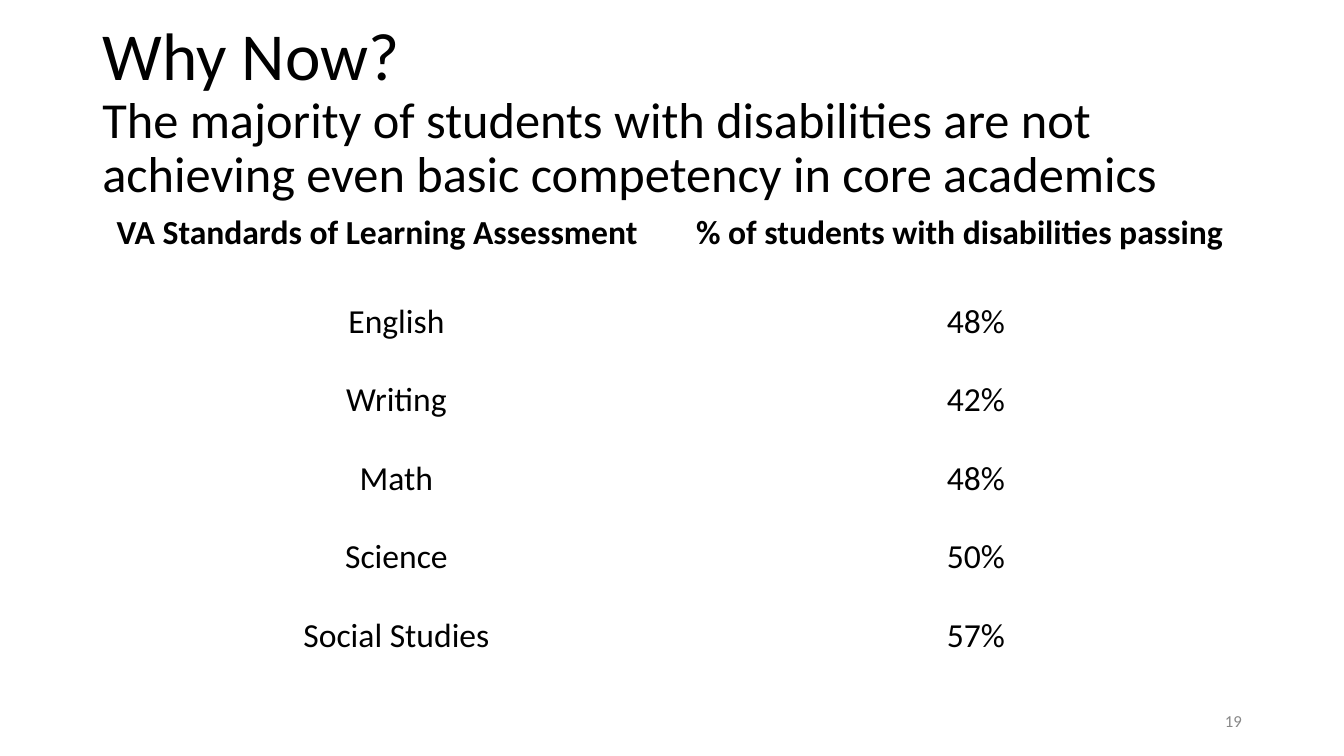
from pptx import Presentation, util as u
from pptx.dml.color import RGBColor
from pptx.enum import text as t

# Content
HEADING = [
    ("Why Now?", 48),
    ("The majority of students with disabilities are not achieving "
     "even basic competency in core academics", 36),
]
PASS_RATES = [
    ("VA Standards of Learning Assessment", "% of students with disabilities passing"),
    ("English", "48%"),
    ("Writing", "42%"),
    ("Math", "48%"),
    ("Science", "50%"),
    ("Social Studies", "57%"),
]
PAGE_NUMBER = [("19", 12)]

# Format, lengths in cm
COLORS = {"text": "000000", "page": "888888"}
FONT = "Calibri"
COLUMN_WIDTH, HEADER_HEIGHT, ROW_HEIGHT = 14.6, 2.23, 1.98
CELL_MARGIN = 0.25
CELL_FORMAT = {"margin_" + side: u.Cm(CELL_MARGIN)
               for side in ("left", "right", "top", "bottom")}
CELL_FORMAT["vertical_anchor"] = t.MSO_ANCHOR.TOP
BOX_FORMAT = {"word_wrap": True, "auto_size": t.MSO_AUTO_SIZE.NONE,
              "vertical_anchor": t.MSO_ANCHOR.MIDDLE}


def apply(target, values):
    for name, value in values.items():
        setattr(target, name, value)


def write(paragraph, words, size, color="text", bold=False, **layout):
    apply(paragraph, layout)
    run = paragraph.add_run()
    run.text = words
    apply(run.font, {"name": FONT, "size": u.Pt(size), "bold": bold})
    run.font.color.rgb = RGBColor.from_string(COLORS[color])


def add_text(slide, place, lines, **style):
    frame = slide.shapes.add_textbox(*map(u.Cm, place)).text_frame
    apply(frame, BOX_FORMAT)
    for i, (words, size) in enumerate(lines):
        paragraph = frame.add_paragraph() if i else frame.paragraphs[0]
        write(paragraph, words, size, **style)


def add_pass_rates(slide):
    height = HEADER_HEIGHT + ROW_HEIGHT * (len(PASS_RATES) - 1)
    place = (2.69, 5.11, 2 * COLUMN_WIDTH, height)
    table = slide.shapes.add_table(len(PASS_RATES), 2, *map(u.Cm, place)).table
    apply(table, {"first_row": False, "horz_banding": False})
    for column in table.columns:
        column.width = u.Cm(COLUMN_WIDTH)
    for r, values in enumerate(PASS_RATES):
        is_header = r == 0
        table.rows[r].height = u.Cm(HEADER_HEIGHT if is_header else ROW_HEIGHT)
        align = t.PP_ALIGN.LEFT if is_header else t.PP_ALIGN.CENTER
        for c, value in enumerate(values):
            cell = table.cell(r, c)
            cell.fill.background()
            apply(cell, CELL_FORMAT)
            write(cell.text_frame.paragraphs[0], value, 24,
                  bold=is_header, alignment=align)


def main():
    deck = Presentation()
    apply(deck, {"slide_width": u.Cm(33.87), "slide_height": u.Cm(19.05)})
    slide = deck.slides.add_slide(deck.slide_layouts[6])

    # Heading, table, page number
    add_text(slide, (2.33, 1.01, 29.21, 3.68), HEADING, line_spacing=0.9)
    add_pass_rates(slide)
    add_text(slide, (23.93, 17.66, 7.62, 1.01), PAGE_NUMBER,
             color="page", alignment=t.PP_ALIGN.RIGHT)

    deck.save("out.pptx")


if __name__ == "__main__":
    main()
